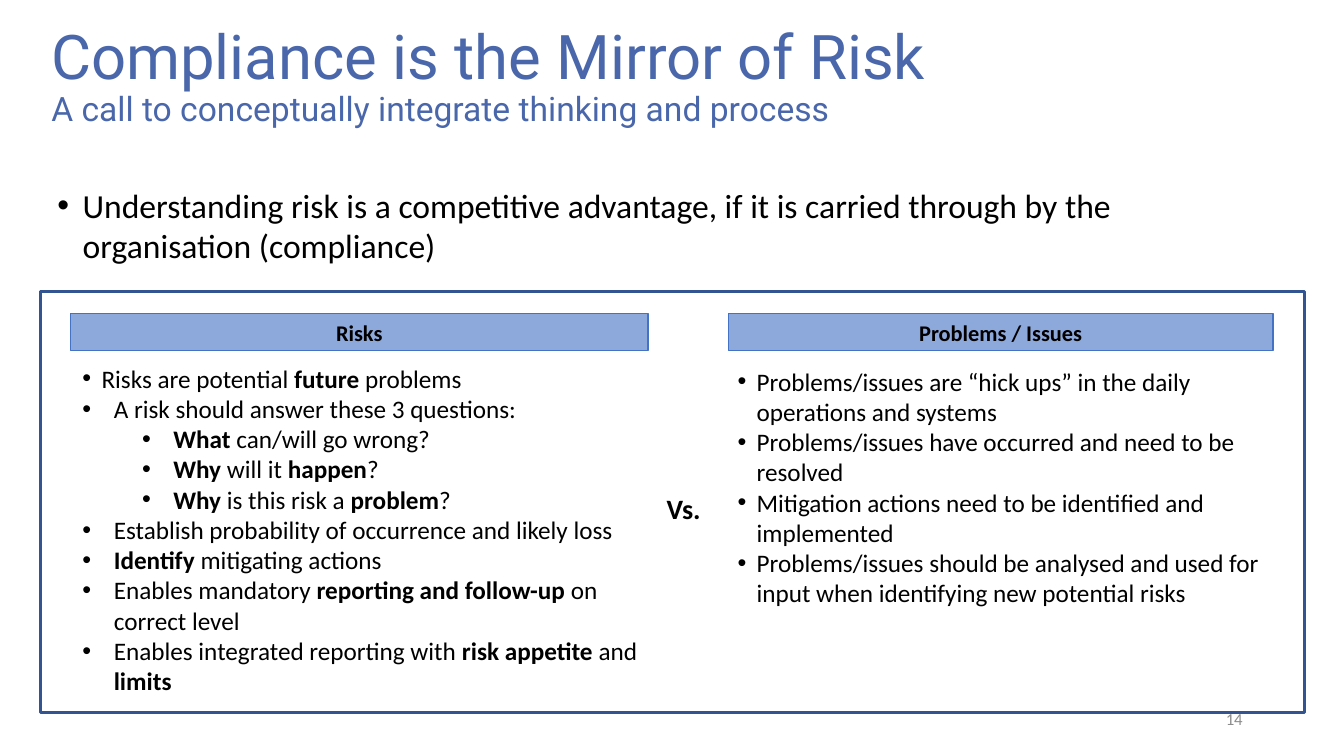
from pptx import Presentation
from pptx.dml.color import RGBColor
from pptx.enum.shapes import MSO_SHAPE
from pptx.enum.text import MSO_ANCHOR, MSO_AUTO_SIZE, PP_ALIGN
from pptx.oxml import parse_xml
from pptx.oxml.ns import nsdecls
from pptx.util import Cm, Pt

RECTANGLE = MSO_SHAPE.RECTANGLE
LEFT, CENTER, RIGHT = PP_ALIGN.LEFT, PP_ALIGN.CENTER, PP_ALIGN.RIGHT
TOP, MIDDLE = MSO_ANCHOR.TOP, MSO_ANCHOR.MIDDLE
NO_AUTOFIT = MSO_AUTO_SIZE.NONE

# Content: list items are (level, text indent in cm, hanging in cm, spans);
# each span is (text, bold)
TITLE = "Compliance is the Mirror of Risk"
SUBTITLE = "A call to conceptually integrate thinking and process"
MESSAGE = ("Understanding risk is a competitive advantage, if it is carried "
           "through by the organisation (compliance)")
PAGE_NUMBER = "14"
NARROW, WIDE, NESTED = (0, 0.48, 0.48), (0, 0.79, 0.79), (1, 2.29, 0.79)
RISKS = [
    (*NARROW, [("Risks are potential ", False), ("future", True),
               (" problems", False)]),
    (*WIDE, [("A risk should answer these 3 questions:", False)]),
    (*NESTED, [("What", True), (" can/will go wrong?", False)]),
    (*NESTED, [("Why", True), (" will it ", False), ("happen", True),
               ("?", False)]),
    (*NESTED, [("Why", True), (" is this risk a ", False),
               ("problem", True), ("?", False)]),
    (*WIDE, [("Establish probability of occurrence and likely loss", False)]),
    (*WIDE, [("Identify ", True), ("mitigating actions", False)]),
    (*WIDE, [("Enables mandatory ", False),
             ("reporting and follow-up ", True), ("on correct level", False)]),
    (*WIDE, [("Enables integrated reporting with ", False),
             ("risk appetite ", True), ("and ", False), ("limits", True)]),
]
ISSUES = [(*NARROW, [(text, False)]) for text in (
    "Problems/issues are “hick ups” in the daily operations and systems",
    "Problems/issues have occurred and need to be resolved",
    "Mitigation actions need to be identified and implemented",
    "Problems/issues should be analysed and used for input when "
    "identifying new potential risks",
)]
# Columns: heading, heading (left, width), list (left, top, width, height), items
COLUMNS = [
    ("Risks", (1.78, 14.55), (1.83, 8.64, 14.53, 9.19), RISKS),
    ("Problems / Issues", (18.36, 13.72), (18.34, 8.71, 13.74, 9.3), ISSUES),
]
HEADING_TOP, HEADING_HEIGHT = 7.9, 0.94

COLORS = {"title": "4967AA", "text": "000000", "number": "8C8C8C",
          "heading": "8DA9DB", "heading line": "4472C4", "frame": "325491"}


def color(name):
    return RGBColor.from_string(COLORS[name])


def place(box, left, top, width, height):
    box.left, box.top = Cm(left), Cm(top)
    box.width, box.height = Cm(width), Cm(height)


def add_span(para, text, size, bold=False, font="Calibri", ink="text"):
    span = para.add_run()
    span.text = text
    span.font.name, span.font.size, span.font.bold = font, Pt(size), bold
    span.font.color.rgb = color(ink)


def add_bullet(para, indent, hanging):
    properties = para._p.get_or_add_pPr()
    properties.set("marL", str(Cm(indent)))
    properties.set("indent", str(-Cm(hanging)))
    properties.append(parse_xml(f'<a:buFont {nsdecls("a")} typeface="Arial"/>'))
    properties.append(parse_xml(f'<a:buChar {nsdecls("a")} char="•"/>'))


def set_frame(box, anchor=TOP):
    frame = box.text_frame
    frame.word_wrap = True
    frame.auto_size = NO_AUTOFIT
    frame.vertical_anchor = anchor
    return frame


def add_text_box(page, area, anchor=TOP):
    return set_frame(page.shapes.add_textbox(*map(Cm, area)), anchor)


def add_rectangle(page, area, line, line_width, fill=None):
    box = page.shapes.add_shape(RECTANGLE, *map(Cm, area))
    box.shadow.inherit = False
    if fill:
        box.fill.solid()
        box.fill.fore_color.rgb = color(fill)
    else:
        box.fill.background()
    box.line.color.rgb = color(line)
    box.line.width = Pt(line_width)
    return box


def add_list(page, area, items):
    frame = add_text_box(page, area)
    frame.margin_top = Cm(0.51)
    for number, (level, indent, hanging, spans) in enumerate(items):
        para = frame.add_paragraph() if number else frame.paragraphs[0]
        para.level = level
        add_bullet(para, indent, hanging)
        for text, bold in spans:
            add_span(para, text, 18, bold)


def add_line(frame, align, text, size, **style):
    para = frame.paragraphs[0]
    para.alignment = align
    add_span(para, text, size, **style)


def main():
    deck = Presentation()
    deck.slide_width, deck.slide_height = Cm(33.87), Cm(19.05)
    page = deck.slides.add_slide(deck.slide_layouts[1])

    # Title with its second line
    title = page.shapes.title
    place(title, 1.04, 0.43, 29.21, 3.05)
    para = set_frame(title, MIDDLE).paragraphs[0]
    para.alignment = LEFT
    para.line_spacing = 0.9
    add_span(para, TITLE, 44, font="Roboto", ink="title")
    para.add_line_break()
    add_span(para, SUBTITLE, 24, font="Roboto", ink="title")

    # Main message
    body = page.placeholders[1]
    place(body, 1.19, 4.52, 30.35, 13.08)
    para = set_frame(body).paragraphs[0]
    para.space_before = Pt(10)
    add_bullet(para, 0.64, 0.64)
    add_span(para, MESSAGE, 24)

    # Page number
    number = add_text_box(page, (23.95, 17.6, 7.62, 1.02), MIDDLE)
    add_line(number, RIGHT, PAGE_NUMBER, 12, ink="number")

    # Two columns under their headings
    for heading, (left, width), list_area, items in COLUMNS:
        add_list(page, list_area, items)
        area = (left, HEADING_TOP, width, HEADING_HEIGHT)
        box = add_rectangle(page, area, "heading line", 1, "heading")
        add_line(set_frame(box, MIDDLE), CENTER, heading, 16, bold=True)

    # Versus label and surrounding frame
    versus = add_text_box(page, (12.62, 12.27, 9.22, 1.12))
    add_line(versus, CENTER, "Vs.", 20, bold=True)
    add_rectangle(page, (1.02, 7.34, 31.85, 10.62), "frame", 2.25)

    deck.save("out.pptx")


if __name__ == "__main__":
    main()
